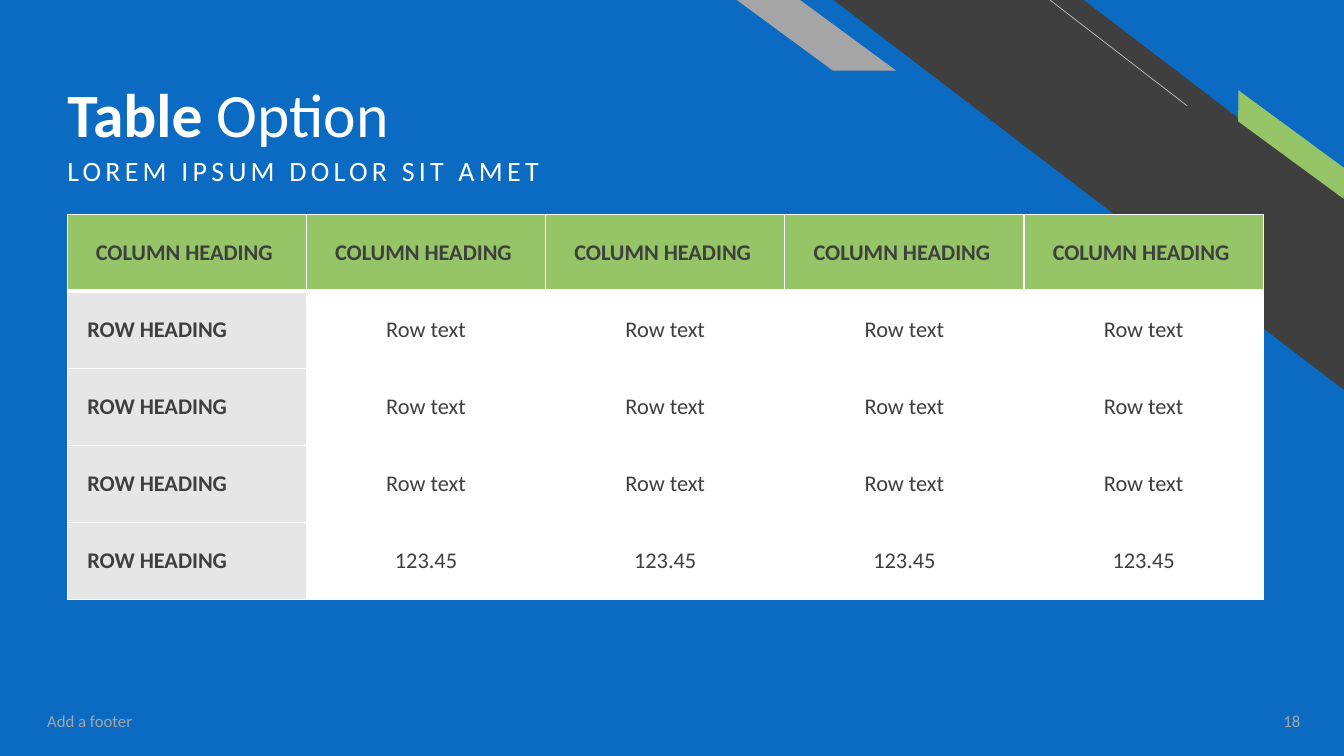
from dataclasses import dataclass

from lxml.etree import SubElement
from pptx import Presentation
from pptx.dml.color import RGBColor
from pptx.enum.shapes import MSO_CONNECTOR, MSO_SHAPE
from pptx.enum.text import MSO_ANCHOR as Anchor, PP_ALIGN as Align
from pptx.oxml.ns import qn
from pptx.util import Pt


@dataclass(frozen=True)
class Theme:
    font: str = "Calibri"
    blue: str = "0B6BC3"
    charcoal: str = "3E3F3E"
    ink: str = "3F3F3F"
    green: str = "95C566"
    gray: str = "A5A5A5"
    hairline: str = "BFBFBF"
    pale: str = "E6E6E6"
    white: str = "FFFFFF"
    title_size: int = 44
    subtitle_size: int = 20
    table_size: int = 16
    footer_size: int = 12


THEME = Theme()
COLUMNS = 5
TABLE_ROWS = [
    ["COLUMN HEADING "] * COLUMNS,
    *[["ROW HEADING"] + ["Row text"] * (COLUMNS - 1)] * 3,
    ["ROW HEADING"] + ["123.45"] * (COLUMNS - 1),
]


def paint(fill, color):
    fill.solid()
    fill.fore_color.rgb = RGBColor.from_string(color)


def style_text(paragraph, size, color, align=Align.LEFT, bold=None):
    paragraph.alignment = align
    font = paragraph.font
    font.name = THEME.font
    font.size = Pt(size)
    font.color.rgb = RGBColor.from_string(color)
    font.bold = bold


def add_band(slide, preset, box, color, adjustment, rotation=0):
    band = slide.shapes.add_shape(preset, *map(Pt, box))
    band.shadow.inherit = False
    band.adjustments[0] = adjustment
    band.rotation = rotation
    band._element.spPr.xfrm.set("flipH", "1")
    paint(band.fill, color)
    band.line.fill.background()


def add_hairline(slide, start, end):
    hairline = slide.shapes.add_connector(
        MSO_CONNECTOR.STRAIGHT, *map(Pt, start + end))
    hairline.line.width = Pt(0.5)
    hairline.line.color.rgb = RGBColor.from_string(THEME.hairline)
    SubElement(hairline._element.spPr, qn("a:effectLst"))


def add_text(slide, box, runs, size, color, align=Align.LEFT, anchor=Anchor.TOP):
    frame = slide.shapes.add_textbox(*map(Pt, box)).text_frame
    frame.word_wrap = True
    frame.vertical_anchor = anchor
    paragraph = frame.paragraphs[0]
    style_text(paragraph, size, color, align)
    for text, bold in runs:
        run = paragraph.add_run()
        run.text = text
        if bold:
            run.font.bold = True
    return frame


def add_title(slide):
    frame = add_text(slide, (41, 16.5, 656, 91), [("Table ", True), ("Option", False)],
                     THEME.title_size, THEME.white, anchor=Anchor.BOTTOM)
    frame.margin_bottom = 0
    frame.paragraphs[0].line_spacing = 0.9


def add_subtitle(slide):
    frame = add_text(slide, (41, 108.7, 580, 48), [("LOREM IPSUM DOLOR SIT AMET", False)],
                     THEME.subtitle_size, THEME.white)
    paragraph = frame.paragraphs[0]
    paragraph.line_spacing = 0.9
    paragraph.space_before = Pt(10)
    paragraph.font._element.set("spc", "300")


def border_cell(cell, widths):
    properties = cell._tc.get_or_add_tcPr()
    for side, width in zip("LRTB", widths):
        border = SubElement(properties, qn(f"a:ln{side}"), w=str(Pt(width)))
        solid = SubElement(border, qn("a:solidFill"))
        SubElement(solid, qn("a:srgbClr"), val=THEME.white)


def fill_cell(cell, text, row, column):
    is_header = row == 0
    is_row_heading = column == 0 and not is_header
    border_cell(cell, (1, 1, 3 if row == 1 else 1, 3 if is_header else 1))
    if is_header:
        color = THEME.green
    else:
        color = THEME.pale if is_row_heading else THEME.white
    paint(cell.fill, color)
    cell.vertical_anchor = Anchor.MIDDLE
    cell.margin_left = Pt(14.4 if is_row_heading else 7.2)
    cell.text = text
    style_text(cell.text_frame.paragraphs[0], THEME.table_size, THEME.ink,
               Align.LEFT if is_row_heading else Align.CENTER,
               is_header or is_row_heading)


def add_option_table(slide):
    table = slide.shapes.add_table(
        len(TABLE_ROWS), COLUMNS, Pt(48), Pt(153), Pt(854.5), Pt(275)).table
    for row, texts in enumerate(TABLE_ROWS):
        for column, text in enumerate(texts):
            fill_cell(table.cell(row, column), text, row, column)


def add_decoration(slide):
    add_band(slide, MSO_SHAPE.DIAGONAL_STRIPE, (595.5, 0, 364.5, 278.5),
             THEME.charcoal, 0.51)
    add_hairline(slide, (848, 75.6), (750, 0))
    add_band(slide, MSO_SHAPE.PARALLELOGRAM, (869, 94.3, 106.5, 18),
             THEME.green, 0.72, 36.3)
    add_band(slide, MSO_SHAPE.PARALLELOGRAM, (526.3, 0, 113.7, 50.4),
             THEME.gray, 1.36)


def add_footer(slide):
    for left, width, text, align in (
            (26.6, 324, "Add a footer", Align.LEFT),
            (877.7, 58.3, "18", Align.RIGHT)):
        add_text(slide, (left, 500.5, width, 28.8), [(text, False)],
                 THEME.footer_size, THEME.gray, align, Anchor.MIDDLE)


def main():
    deck = Presentation()
    deck.slide_width, deck.slide_height = Pt(960), Pt(540)
    slide = deck.slides.add_slide(deck.slide_layouts[6])
    paint(slide.background.fill, THEME.blue)
    add_decoration(slide)
    add_title(slide)
    add_subtitle(slide)
    add_option_table(slide)
    add_footer(slide)
    deck.save("out.pptx")


if __name__ == "__main__":
    main()
